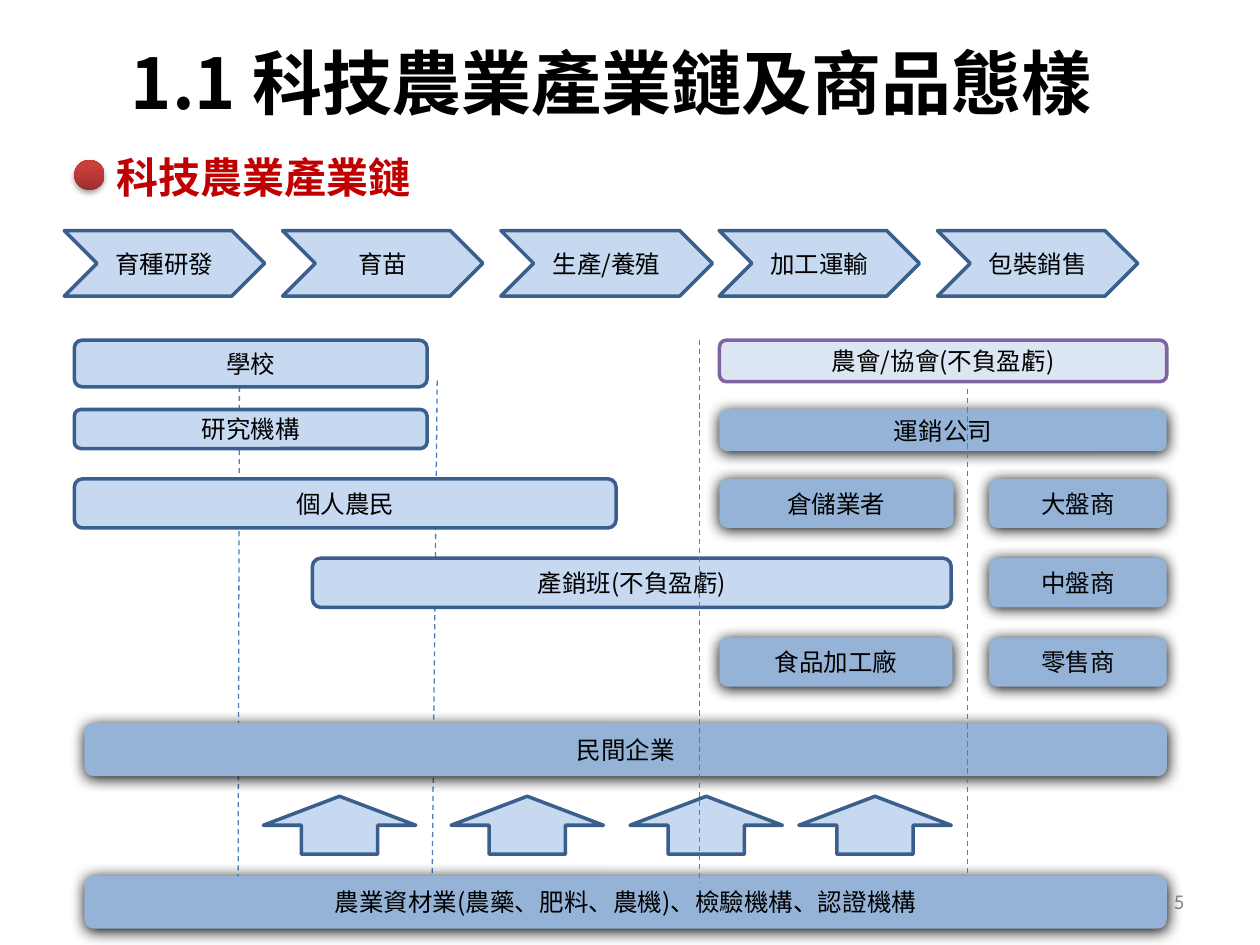
from lxml import etree
from pptx import Presentation
from pptx.dml.color import RGBColor
from pptx.enum.dml import MSO_LINE
from pptx.enum.shapes import MSO_CONNECTOR, MSO_SHAPE
from pptx.enum.text import MSO_ANCHOR, PP_ALIGN
from pptx.oxml.ns import qn
from pptx.util import Inches, Pt

BOX, CHEVRON = MSO_SHAPE.FLOWCHART_ALTERNATE_PROCESS, MSO_SHAPE.CHEVRON
UP_ARROW, OVAL = MSO_SHAPE.UP_ARROW, MSO_SHAPE.OVAL
LEFT, CENTER, RIGHT = PP_ALIGN.LEFT, PP_ALIGN.CENTER, PP_ALIGN.RIGHT
MIDDLE = MSO_ANCHOR.MIDDLE

BLACK = RGBColor(0x00, 0x00, 0x00)
GRAY = RGBColor(0x8C, 0x8C, 0x8C)
RED = RGBColor(0xC0, 0x00, 0x00)
BALL_DARK = RGBColor(0x9C, 0x2F, 0x2D)
BALL_LIGHT = RGBColor(0xCB, 0x3E, 0x3A)
PALE = RGBColor(0xC6, 0xD9, 0xF1)
PALER = RGBColor(0xDC, 0xE6, 0xF2)
MID = RGBColor(0x95, 0xB3, 0xD7)
NAVY = RGBColor(0x3A, 0x5F, 0x8C)
PURPLE = RGBColor(0x80, 0x64, 0xA2)
DASH = RGBColor(0x4B, 0x7E, 0xBC)
CJK = "Noto Sans CJK SC"

TITLE = "1.1 科技農業產業鏈及商品態樣"
HEADING = "科技農業產業鏈"
STAGES = [("育種研發", 1.59), ("育苗", 1.59), ("生產/養殖", 1.68),
          ("加工運輸", 1.59), ("包裝銷售", 1.59)]
STAGE_LEFT, STAGE_TOP, STAGE_PITCH, STAGE_H = 0.51, 1.83, 1.7325, 0.52

# Column edges and row tops shared by the boxes
FARM, SUPPLY, TRADE, END = 0.59, 5.71, 7.85, 9.26
BASE = 0.67
ROWS = [2.7, 3.25, 3.8, 4.43, 5.06, 5.74, 6.95]

# Fill and outline of each kind of actor; no outline means a soft shadow
STYLES = {"public": (PALE, NAVY), "association": (PALER, PURPLE),
          "company": (MID, None)}
# text, kind, row, left, right, height
ACTORS = [
    ("學校", "public", 0, FARM, 3.39, 0.37),
    ("農會/協會(不負盈虧)", "association", 0, SUPPLY, END, 0.33),
    ("研究機構", "public", 1, FARM, 3.39, 0.31),
    ("運銷公司", "company", 1, SUPPLY, END, 0.33),
    ("個人農民", "public", 2, FARM, 4.89, 0.39),
    ("倉儲業者", "company", 2, SUPPLY, 7.57, 0.39),
    ("大盤商", "company", 2, TRADE, END, 0.39),
    ("產銷班(不負盈虧)", "public", 3, 2.48, 7.55, 0.39),
    ("中盤商", "company", 3, TRADE, END, 0.39),
    ("食品加工廠", "company", 4, SUPPLY, 7.56, 0.39),
    ("零售商", "company", 4, TRADE, END, 0.39),
    ("民間企業", "company", 5, BASE, END, 0.42),
    ("農業資材業(農藥、肥料、農機)、檢驗機構、認證機構", "company", 6, BASE, END, 0.42),
]
ARROW_LEFTS = [2.09, 3.58, 5, 6.34]
ARROW_TOP, ARROW_W, ARROW_H = 6.32, 1.21, 0.46
# x1, y1, x2, y2
BACK_DIVIDERS = [(3.47, 3.02, 3.43, 7), (1.9, 3.07, 1.89, 7)]
FRONT_DIVIDERS = [(5.55, 2.7, 5.55, 7), (7.68, 3.09, 7.68, 6.95)]


def write(tf, text, size, color=BLACK, align=CENTER, bold=False, font=CJK):
    p = tf.paragraphs[0]
    p.alignment = align
    r = p.add_run()
    r.text = text
    r.font.size, r.font.bold, r.font.name = Pt(size), bold, font
    r.font.color.rgb = color
    etree.SubElement(r.font._element, qn("a:ea"), typeface=font)


def add_shadow(s, blur, dist, alpha):
    """Add a black downward shadow; blur and dist in points, alpha in percent."""
    effects = s._element.spPr.find(qn("a:effectLst"))
    shadow = etree.SubElement(effects, qn("a:outerShdw"), blurRad=str(Pt(blur)),
                              dist=str(Pt(dist)), dir="5400000", rotWithShape="0")
    color = etree.SubElement(shadow, qn("a:srgbClr"), val=str(BLACK))
    etree.SubElement(color, qn("a:alpha"), val=str(alpha * 1000))


def add_block(slide, kind, x, y, w, h, fill, line=None, text=None):
    s = slide.shapes.add_shape(kind, Inches(x), Inches(y), Inches(w), Inches(h))
    s.fill.solid()
    s.fill.fore_color.rgb = fill
    if line is None:
        s.line.fill.background()
    else:
        s.line.color.rgb = line
        s.line.width = Pt(2)
    s.shadow.inherit = False
    if text:
        tf = s.text_frame
        tf.word_wrap = True
        tf.margin_left = tf.margin_right = 0
        tf.vertical_anchor = MIDDLE
        write(tf, text, 14)
    return s


def add_divider(slide, *ends):
    c = slide.shapes.add_connector(MSO_CONNECTOR.STRAIGHT, *map(Inches, ends))
    c.line.color.rgb = DASH
    c.line.width = Pt(0.75)
    c.line.dash_style = MSO_LINE.DASH
    etree.SubElement(c._element.spPr, qn("a:effectLst"))


def add_text(slide, x, y, w, h):
    sp = slide.shapes.add_textbox(Inches(x), Inches(y), Inches(w), Inches(h))
    return sp.text_frame


def main():
    prs = Presentation()
    prs.slide_width, prs.slide_height = Inches(10), Inches(7.5)
    slide = prs.slides.add_slide(prs.slide_layouts[5])

    title = slide.shapes.title
    title.left, title.top = Inches(0.35), Inches(0.21)
    title.width, title.height = Inches(9), Inches(0.87)
    title.text_frame.vertical_anchor = MIDDLE
    write(title.text_frame, TITLE, 40, bold=True)

    tf = add_text(slide, 7.17, 6.95, 2.33, 0.4)
    tf.word_wrap = True
    tf.vertical_anchor = MIDDLE
    write(tf, "5", 12, GRAY, RIGHT, font="Calibri")

    for ends in BACK_DIVIDERS:
        add_divider(slide, *ends)

    for i, (text, w) in enumerate(STAGES):
        add_block(slide, CHEVRON, STAGE_LEFT + i * STAGE_PITCH, STAGE_TOP, w,
                  STAGE_H, PALE, NAVY, text)

    for x in ARROW_LEFTS:
        add_block(slide, UP_ARROW, x, ARROW_TOP, ARROW_W, ARROW_H, PALE, NAVY)

    for text, kind, row, left, right, h in ACTORS:
        fill, line = STYLES[kind]
        s = add_block(slide, BOX, left, ROWS[row], right - left, h, fill, line, text)
        if line is None:
            add_shadow(s, 8.5, 1, 100)

    for ends in FRONT_DIVIDERS:
        add_divider(slide, *ends)

    ball = add_block(slide, OVAL, FARM, 1.27, 0.24, 0.24, BALL_DARK)
    ball.fill.gradient()
    ball.fill.gradient_angle = 90
    for stop, color, position in zip(ball.fill.gradient_stops,
                                     (BALL_DARK, BALL_LIGHT), (0, 0.8)):
        stop.color.rgb = color
        stop.position = position
    add_shadow(ball, 3.1, 1.8, 35)

    tf = add_text(slide, 0.83, 1.15, 2.56, 0.5)
    tf.word_wrap = False
    write(tf, HEADING, 24, RED, LEFT, bold=True)

    prs.save("out.pptx")


if __name__ == "__main__":
    main()
